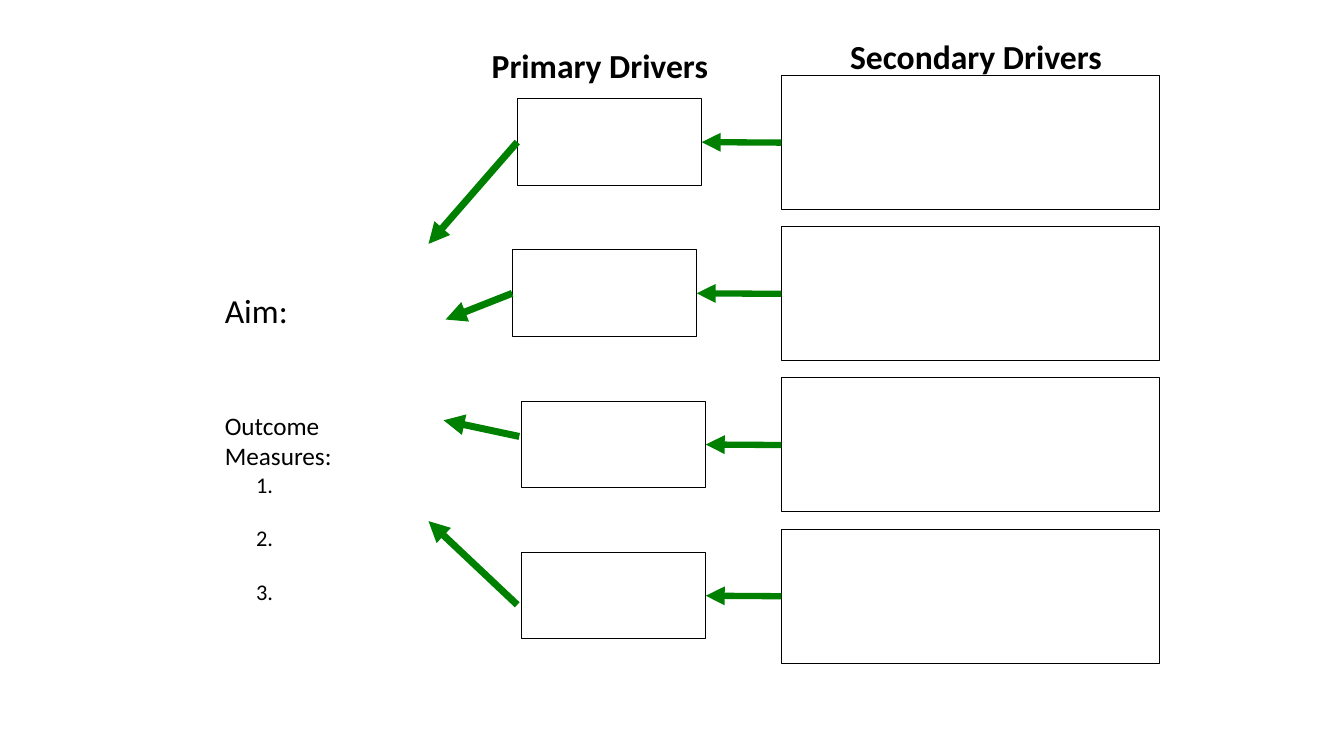
"""Build a driver diagram slide: aim, primary drivers and secondary drivers."""
from dataclasses import dataclass

from lxml import etree
from pptx import Presentation
from pptx.dml.color import RGBColor
from pptx.enum.shapes import MSO_CONNECTOR, MSO_SHAPE
from pptx.enum.text import PP_ALIGN
from pptx.oxml.ns import qn
from pptx.util import Pt

STRAIGHT = MSO_CONNECTOR.STRAIGHT
RECTANGLE = MSO_SHAPE.RECTANGLE
LEFT, CENTER = PP_ALIGN.LEFT, PP_ALIGN.CENTER
LEFT_SIDE, RIGHT_SIDE = 1, 3
PX = 9144


@dataclass(frozen=True)
class Theme:
    """Hold the colours, font, type sizes and line widths."""
    font: str = "Calibri"
    ink: RGBColor = RGBColor(0, 0, 0)
    paper: RGBColor = RGBColor(255, 255, 255)
    arrow: RGBColor = RGBColor(0, 128, 0)
    heading: int = 24
    label: int = 18
    item: int = 16
    border: float = 0.75
    aim_arrow: float = 5
    driver_arrow: float = 4.5


THEME = Theme()
SLIDE_SIZE = (1333, 750)

HEADINGS = [
    ("Primary Drivers", (415, 42, 360, 50)),
    ("Secondary Drivers", (769, 33, 398, 33)),
]

AIM_BOX = (198, 285, 217, 315)
AIM_LINES = [
    ("Aim:", THEME.heading, 0, 19, 0),
    ("Outcome Measures:", THEME.label, 57, 19, 0),
    ("1.", THEME.item, 0, 88, -38),
    ("2.", THEME.item, 19, 88, -38),
    ("3.", THEME.item, 19, 88, -38),
]

ROW_PITCH = 150
PRIMARY_TOP, PRIMARY_SIZE = 98, (183, 86)
SECONDARY_LEFT, SECONDARY_TOP, SECONDARY_SIZE = 775, 75, (375, 133)
DRIVERS = [
    {"left": 513, "filled": True, "start": None, "aim": (425, 242)},
    {"left": 508, "filled": False, "start": None, "aim": (442, 317)},
    {"left": 517, "filled": False, "start": (515, 433), "aim": (440, 417)},
    {"left": 517, "filled": False, "start": (513, 600), "aim": (425, 517)},
]


def emu(lengths):
    """Turn px lengths into EMU."""
    return [length * PX for length in lengths]


def add_text(page, place, lines, align):
    """Add a text box with one paragraph per line entry."""
    frame = page.shapes.add_textbox(*emu(place)).text_frame
    frame.word_wrap = True
    frame.margin_left = frame.margin_right = 6 * PX
    frame.margin_top = frame.margin_bottom = 3 * PX
    frame.text = "\n".join(line[0] for line in lines)
    for para, (_, size, before, margin, indent) in zip(frame.paragraphs, lines):
        para.alignment = align
        para.space_before = Pt(before)
        properties = para._p.get_or_add_pPr()
        properties.set("marL", str(margin * PX))
        properties.set("indent", str(indent * PX))
        span = para.runs[0]
        span.font.name = THEME.font
        span.font.size = Pt(size)
        span.font.bold = align == CENTER
        span.font.color.rgb = THEME.ink


def add_box(page, place, filled):
    """Add an empty outlined driver box."""
    box = page.shapes.add_shape(RECTANGLE, *emu(place))
    box.shadow.inherit = False
    if filled:
        box.fill.solid()
        box.fill.fore_color.rgb = THEME.paper
    else:
        box.fill.background()
    box.line.color.rgb = THEME.ink
    box.line.width = Pt(THEME.border)
    return box


def add_arrow(page, start, end, width):
    """Add a green arrow with its head at the end point."""
    arrow = page.shapes.add_connector(STRAIGHT, *emu(start + end))
    arrow.line.color.rgb = THEME.arrow
    arrow.line.width = Pt(width)
    head = etree.SubElement(arrow.line._get_or_add_ln(), qn("a:tailEnd"))
    head.set("type", "triangle")
    etree.SubElement(arrow._element.spPr, qn("a:effectLst"))
    return arrow


def add_driver(page, row, driver):
    """Add one row of boxes and the arrows that lead to the aim."""
    offset = row * ROW_PITCH
    primary_place = (driver["left"], PRIMARY_TOP + offset, *PRIMARY_SIZE)
    secondary_place = (SECONDARY_LEFT, SECONDARY_TOP + offset, *SECONDARY_SIZE)
    primary = add_box(page, primary_place, driver["filled"])
    secondary = add_box(page, secondary_place, driver["filled"])

    middle = PRIMARY_TOP + offset + PRIMARY_SIZE[1] // 2
    primary_right = driver["left"] + PRIMARY_SIZE[0]
    link = add_arrow(page, (SECONDARY_LEFT, middle), (primary_right, middle),
                     THEME.driver_arrow)
    link.begin_connect(secondary, LEFT_SIDE)
    link.end_connect(primary, RIGHT_SIDE)

    start = driver["start"] or (driver["left"], middle)
    aim_link = add_arrow(page, start, driver["aim"], THEME.aim_arrow)
    if driver["start"] is None:
        aim_link.begin_connect(primary, LEFT_SIDE)


def main():
    """Build and save the deck."""
    deck = Presentation()
    deck.slide_width, deck.slide_height = emu(SLIDE_SIZE)
    page = deck.slides.add_slide(deck.slide_layouts.get_by_name("Blank"))
    add_text(page, AIM_BOX, AIM_LINES, LEFT)
    for heading, place in HEADINGS:
        add_text(page, place, [(heading, THEME.heading, 0, 0, 0)], CENTER)
    for row, driver in enumerate(DRIVERS):
        add_driver(page, row, driver)
    deck.save("out.pptx")


if __name__ == "__main__":
    main()
